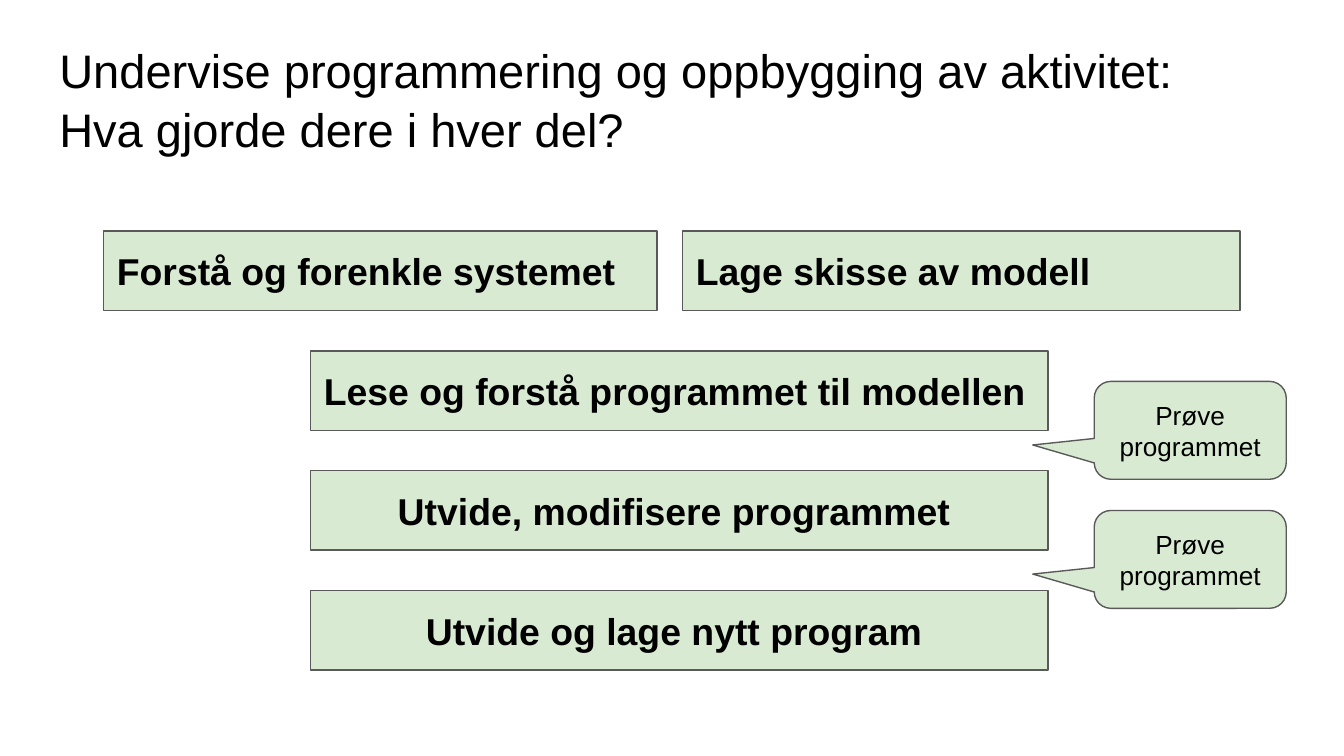
from pptx import Presentation
from pptx import util as u
from pptx.dml.color import RGBColor
from pptx.enum import shapes, text

BLACK, WHITE, GREEN, GREY = "000000", "FFFFFF", "D9EAD3", "595959"
ROW_TOP, ROW_STEP, ROW_HEIGHT = 4.37, 2.265, 1.5
CALLOUT_TOP, CALLOUT_STEP = 7.21, 2.44


def color(value):
    return RGBColor.from_string(value)


def write(shape, content, size, bold=False, align=text.PP_ALIGN.LEFT,
          anchor=text.MSO_ANCHOR.MIDDLE, inset=0.25, spacing=1.0):
    """Fill the shape with one paragraph per line of content."""
    frame = shape.text_frame
    frame.text = content
    frame.word_wrap = True
    frame.auto_size = text.MSO_AUTO_SIZE.NONE
    frame.vertical_anchor = anchor
    frame.margin_left = frame.margin_right = u.Cm(0.25)
    frame.margin_top = frame.margin_bottom = u.Cm(inset)
    for paragraph in frame.paragraphs:
        paragraph.alignment = align
        paragraph.line_spacing = spacing
        for run in paragraph.runs:
            run.font.name = "Arial"
            run.font.size = u.Pt(size)
            run.font.bold = bold
            run.font.color.rgb = color(BLACK)


def add_title(slide, content):
    title = slide.shapes.title
    title.left, title.top = u.Cm(0.87), u.Cm(0.51)
    title.width, title.height = u.Cm(23.67), u.Cm(3.53)
    write(title, content, 25.2, anchor=text.MSO_ANCHOR.TOP, spacing=1.03)


def add_green_shape(slide, kind, left, top, width, height):
    shape = slide.shapes.add_shape(
        kind, u.Cm(left), u.Cm(top), u.Cm(width), u.Cm(height))
    shape.shadow.inherit = False
    shape.fill.solid()
    shape.fill.fore_color.rgb = color(GREEN)
    shape.line.color.rgb = color(GREY)
    shape.line.width = u.Pt(0.75)
    return shape


def add_step(slide, content, row, left, width, align=text.PP_ALIGN.LEFT):
    box = add_green_shape(slide, shapes.MSO_SHAPE.RECTANGLE, left,
                          ROW_TOP + row * ROW_STEP, width, ROW_HEIGHT)
    write(box, content, 20, bold=True, align=align)


def add_callout(slide, content, index):
    callout = add_green_shape(
        slide, shapes.MSO_SHAPE.ROUNDED_RECTANGULAR_CALLOUT,
        20.68, CALLOUT_TOP + index * CALLOUT_STEP, 3.63, 1.85)
    for position, value in enumerate((-0.82, 0.15, 0.17)):
        callout.adjustments[position] = value
    write(callout, content, 14, align=text.PP_ALIGN.CENTER, inset=0.13)


def main():
    presentation = Presentation()
    presentation.slide_width, presentation.slide_height = u.Cm(25.4), u.Cm(14.29)
    slide = presentation.slides.add_slide(presentation.slide_layouts[5])
    slide.background.fill.solid()
    slide.background.fill.fore_color.rgb = color(WHITE)

    add_title(slide, "Undervise programmering og oppbygging av aktivitet:\n"
                     "Hva gjorde dere i hver del?")
    center = text.PP_ALIGN.CENTER
    add_step(slide, "Forstå og forenkle systemet", 0, 1.96, 10.46)
    add_step(slide, "Lage skisse av modell", 0, 12.9, 10.54)
    add_step(slide, "Lese og forstå programmet til modellen", 1, 5.87, 13.94)
    add_step(slide, "Utvide, modifisere programmet ", 2, 5.87, 13.94, center)
    add_step(slide, "Utvide og lage nytt program ", 3, 5.87, 13.94, center)
    for index in range(2):
        add_callout(slide, "Prøve programmet", index)

    presentation.save("out.pptx")


if __name__ == "__main__":
    main()
